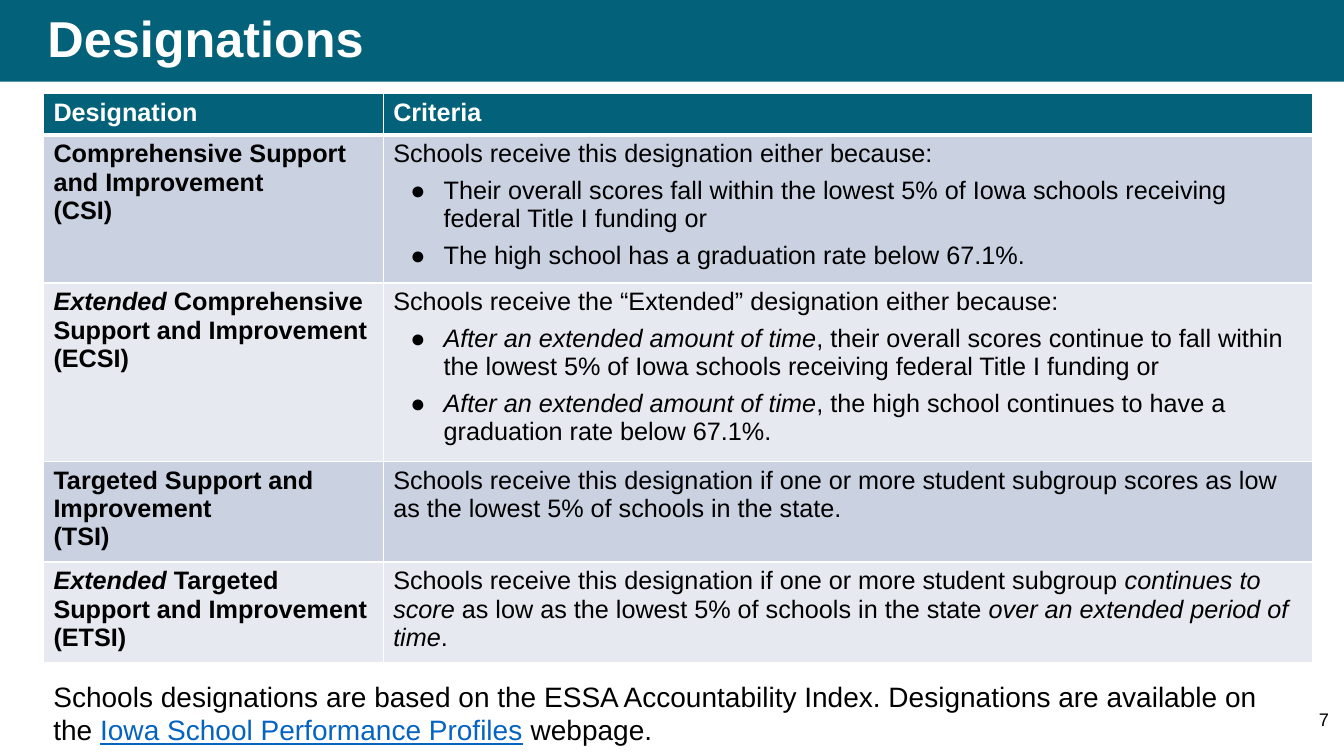
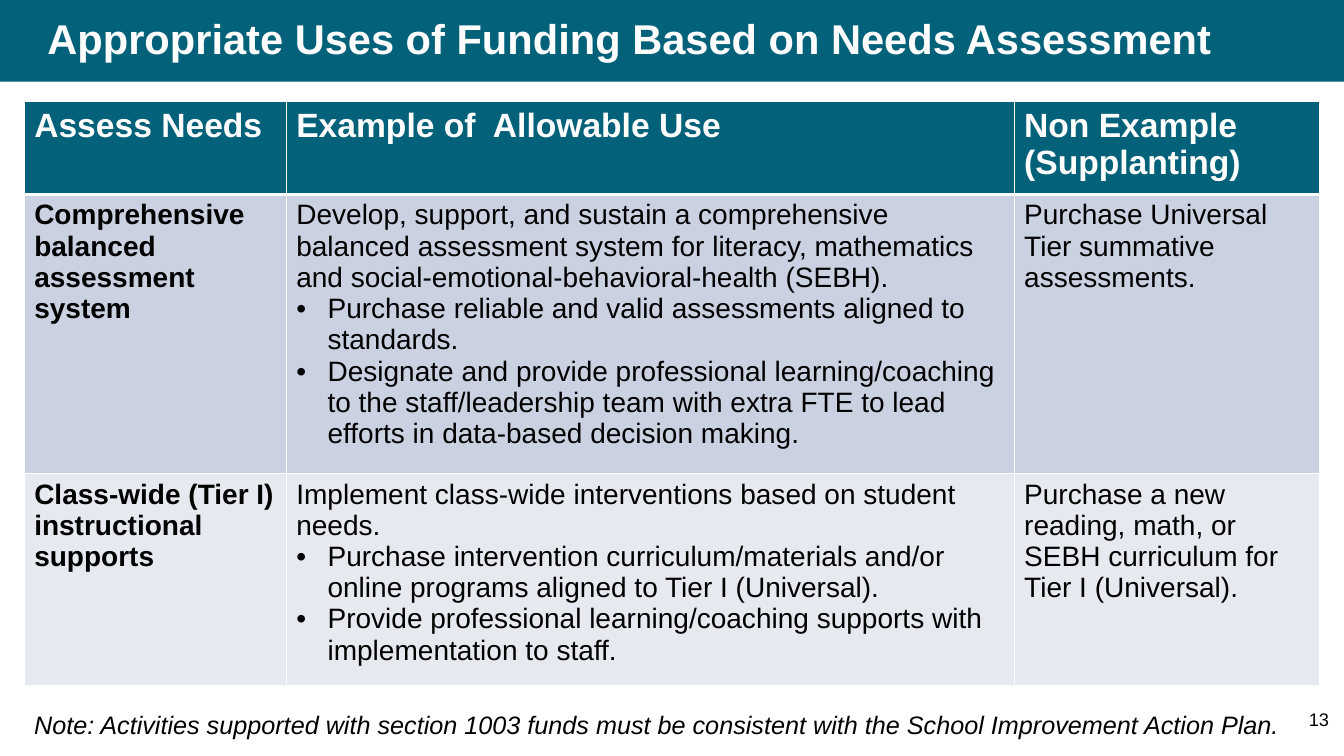
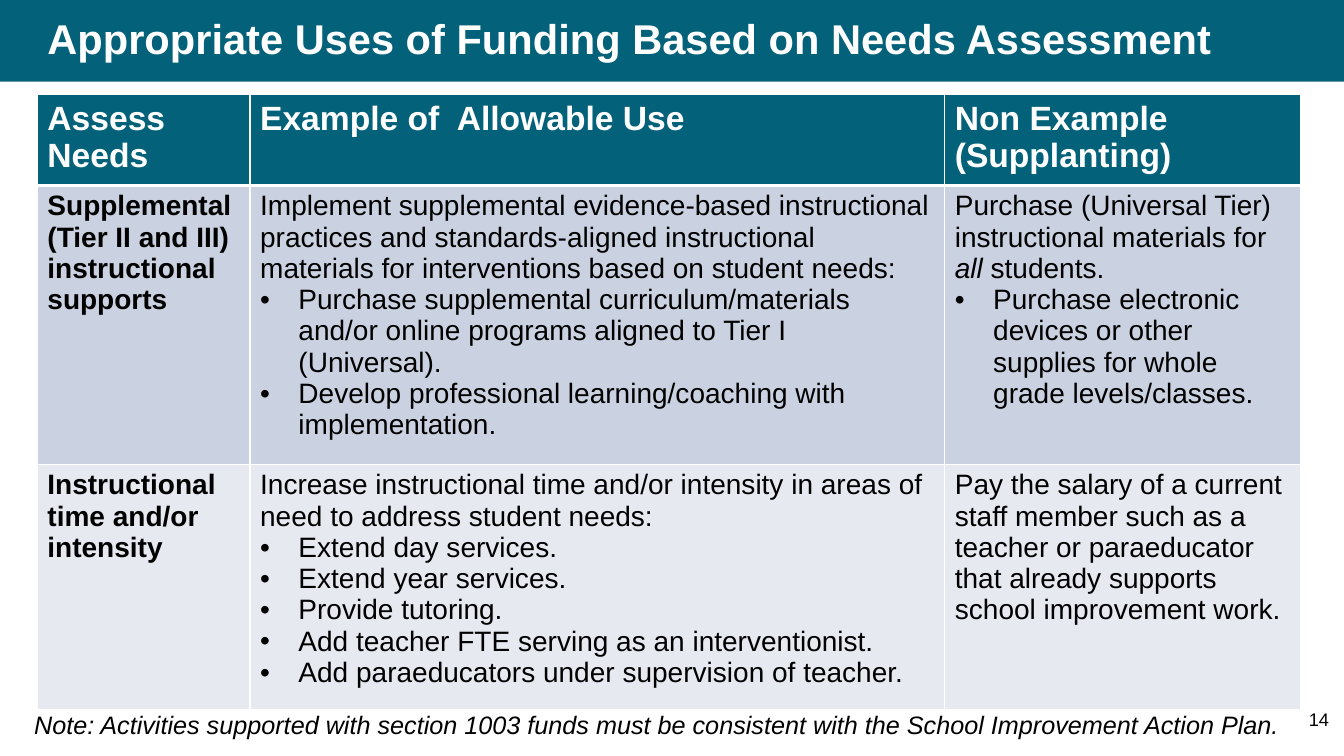
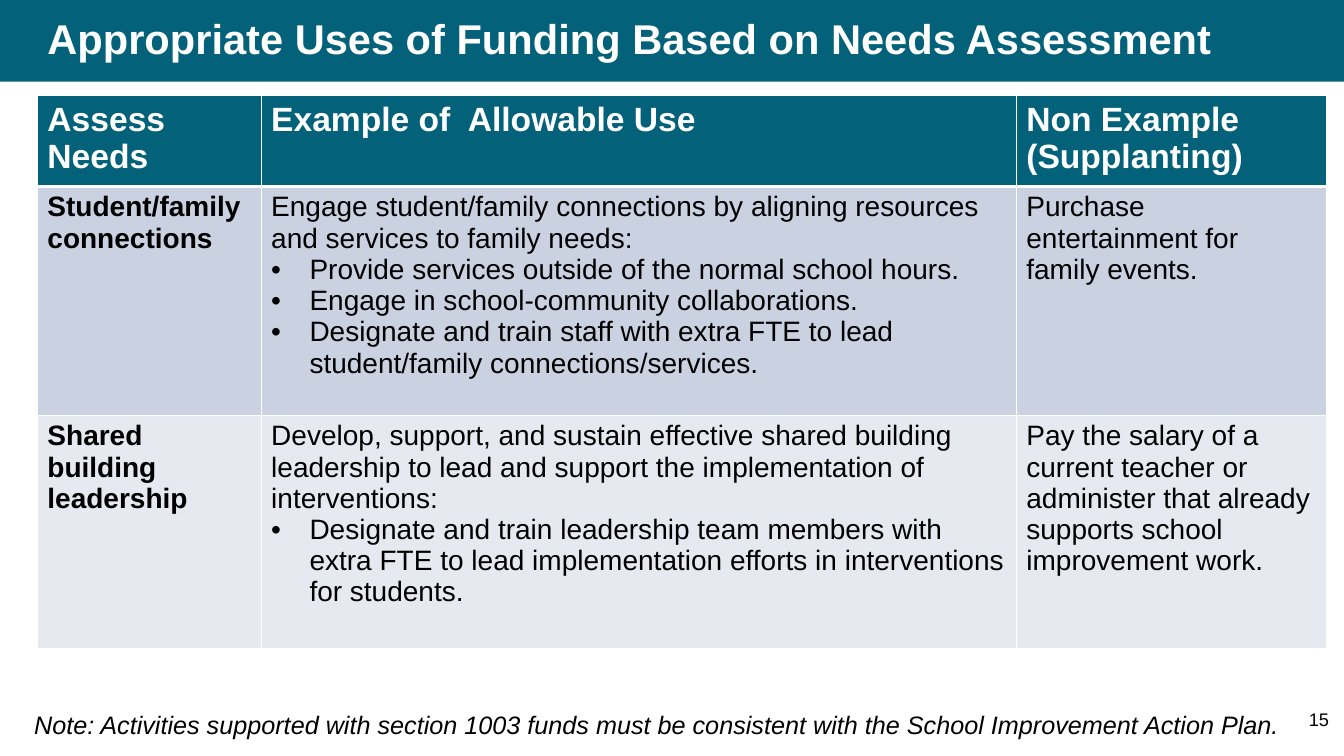
from dataclasses import dataclass

from lxml import etree
from pptx import Presentation
from pptx import util as u
from pptx.dml.color import RGBColor
from pptx.enum import shapes, text
from pptx.oxml import ns

TEAL = RGBColor(0x03, 0x61, 0x7A)
BLUE_GREY = RGBColor(0xCA, 0xD1, 0xE0)
PALE_GREY = RGBColor(0xE6, 0xE9, 0xF0)
LINK_BLUE = RGBColor(0x05, 0x63, 0xC1)
WHITE = RGBColor(0xFF, 0xFF, 0xFF)
BLACK = RGBColor(0, 0, 0)

FONT = "Arial"
BAND_HEIGHT = 10.8
TITLE_ONLY = 5
BULLET_MARK = "• "
ITALIC_MARK = "*"
LINK_MARK = "_"


@dataclass
class Bullet:
    glyph: str
    indent: float
    hang: float
    space: float = 0


ROUND_BULLET = Bullet("●", 0.5, 0.33, 6)
TIGHT_BULLET = Bullet("•", 0.31, 0.31)
WIDE_BULLET = Bullet("•", 0.38, 0.38)


class Deck:
    """Style and current page; lengths are percent of the slide's size."""

    def __init__(self):
        self.deck = Presentation()
        self.deck.slide_width = u.Inches(13.33)
        self.deck.slide_height = u.Inches(7.5)
        self.layout = self.deck.slide_layouts[TITLE_ONLY]
        self.page = None

    def across(self, share):
        return round(self.deck.slide_width * share / 100)

    def down(self, share):
        return round(self.deck.slide_height * share / 100)

    def area(self, left, top, width, height):
        return (self.across(left), self.down(top),
                self.across(width), self.down(height))

    def add_page(self, title, size, number):
        self.page = self.deck.slides.add_slide(self.layout)
        if len(self.deck.slides) == 1:
            self.add_band()
        self.add_title(title, size)
        self.add_number(number)

    def add_band(self):
        """Draw the title band and place it on the shared layout."""
        band = self.page.shapes.add_shape(
            shapes.MSO_SHAPE.RECTANGLE, *self.area(0, 0, 100, BAND_HEIGHT))
        band.shadow.inherit = False
        band.fill.solid()
        band.fill.fore_color.rgb = TEAL
        band.line.fill.background()
        self.layout.shapes._spTree.insert(2, band._element)

    def add_title(self, title, size):
        box = self.page.shapes.title
        box.left, box.top, box.width, box.height = self.area(
            2.78, 0, 92.42, BAND_HEIGHT)
        frame = box.text_frame
        frame.auto_size = text.MSO_AUTO_SIZE.NONE
        frame.vertical_anchor = text.MSO_ANCHOR.MIDDLE
        para = frame.paragraphs[0]
        para.alignment = text.PP_ALIGN.LEFT
        para.line_spacing = 0.9
        self.add_spans(para, title, size, WHITE, bold=True)

    def add_number(self, number):
        frame = self.add_text(str(number), 13, 93.62, 92.4, 6, 7.6)
        frame.margin_top = frame.margin_bottom = u.Inches(0.1)
        frame.paragraphs[0].alignment = text.PP_ALIGN.RIGHT

    def add_text(self, words, size, *place):
        box = self.page.shapes.add_textbox(*self.area(*place))
        frame = box.text_frame
        frame.word_wrap = True
        self.add_spans(frame.paragraphs[0], words, size)
        return frame

    def add_spans(self, para, words, size, color=BLACK, bold=False):
        """Write runs; text between marks is italic or looks like a link."""
        for i, part in enumerate(words.split(LINK_MARK)):
            for j, chunk in enumerate(part.split(ITALIC_MARK)):
                if not chunk:
                    continue
                span = para.add_run()
                span.text = chunk
                font = span.font
                font.name, font.size = FONT, u.Pt(size)
                font.bold, font.italic = bold, j % 2 == 1
                font.underline = i % 2 == 1
                font.color.rgb = LINK_BLUE if i % 2 else color

    def add_bullet(self, para, bullet):
        para.space_before = u.Pt(bullet.space)
        props = para._p.get_or_add_pPr()
        props.set("marL", str(u.Inches(bullet.indent)))
        props.set("indent", str(-u.Inches(bullet.hang)))
        color = etree.SubElement(props, ns.qn("a:buClr"))
        etree.SubElement(color, ns.qn("a:srgbClr"), val=str(BLACK))
        etree.SubElement(props, ns.qn("a:buFont"), typeface=FONT)
        etree.SubElement(props, ns.qn("a:buChar"), char=bullet.glyph)

    def add_borders(self, cell, top, bottom):
        props = cell._tc.get_or_add_tcPr()
        for side, width in zip("LRTB", (1, 1, top, bottom)):
            line = etree.SubElement(props, ns.qn("a:ln" + side),
                                    w=str(u.Pt(width)))
            fill = etree.SubElement(line, ns.qn("a:solidFill"))
            etree.SubElement(fill, ns.qn("a:srgbClr"), val=str(WHITE))

    def add_table(self, left, top, columns, heights, rows, sizes, bullet):
        place = self.area(left, top, sum(columns), sum(heights))
        grid = self.page.shapes.add_table(
            len(rows), len(columns), *place).table
        for column, width in zip(grid.columns, columns):
            column.width = self.across(width)
        for r, (height, cells) in enumerate(zip(heights, rows)):
            grid.rows[r].height = self.down(height)
            for c, words in enumerate(cells):
                self.fill_cell(grid.cell(r, c), words, r, c, sizes, bullet)

    def fill_cell(self, cell, words, r, c, sizes, bullet):
        header = r == 0
        self.add_borders(cell, 3 if r == 1 else 1, 3 if header else 1)
        cell.fill.solid()
        cell.fill.fore_color.rgb = (
            TEAL if header else BLUE_GREY if r % 2 else PALE_GREY)
        frame = cell.text_frame
        for i, line in enumerate(words.split("\n")):
            para = frame.add_paragraph() if i else frame.paragraphs[0]
            if line.startswith(BULLET_MARK):
                self.add_bullet(para, bullet)
            self.add_spans(para, line.removeprefix(BULLET_MARK),
                           sizes[0] if header else sizes[1],
                           WHITE if header else BLACK, header or c == 0)


# Designations table
DESIGNATIONS = [
    ("Designation", "Criteria"),
    ("Comprehensive Support and Improvement\n(CSI)",
     "Schools receive this designation either because:\n"
     "• Their overall scores fall within the lowest 5% of Iowa schools "
     "receiving federal Title I funding or\n"
     "• The high school has a graduation rate below 67.1%."),
    ("*Extended *Comprehensive Support and Improvement (ECSI)",
     "Schools receive the “Extended” designation either because:\n"
     "• *After an extended amount of time*, their overall scores continue to "
     "fall within the lowest 5% of Iowa schools receiving federal Title I "
     "funding or\n"
     "• *After an extended amount of time*, the high school continues to "
     "have a graduation rate below 67.1%."),
    ("Targeted Support and Improvement\n(TSI)",
     "Schools receive this designation if one or more student subgroup "
     "scores as low as the lowest 5% of schools in the state."),
    ("*Extended* Targeted Support and Improvement (ETSI)",
     "Schools receive this designation if one or more student subgroup "
     "*continues to score* as low as the lowest 5% of schools in the state "
     "*over an extended period of time*."),
]
PROFILES_NOTE = (
    "Schools designations are based on the ESSA Accountability Index. "
    "Designations are available on the _Iowa School Performance Profiles_ "
    "webpage.")

# Funding tables
FUNDING_TITLE = "Appropriate Uses of Funding Based on Needs Assessment"
FUNDING_HEADER = ("Assess Needs", "Example of  Allowable Use",
                  "Non Example (Supplanting)")
FUNDING_NOTE = ("*Note: Activities supported with section 1003 funds must be "
                "consistent with the School Improvement Action Plan.*")

ASSESSMENT_ROWS = [
    ("Comprehensive balanced assessment system",
     "Develop, support, and sustain a comprehensive balanced assessment "
     "system for literacy, mathematics and "
     "social-emotional-behavioral-health (SEBH).\n"
     "• Purchase reliable and valid assessments aligned to standards.\n"
     "• Designate and provide professional learning/coaching to the "
     "staff/leadership team with extra FTE to lead efforts in data-based "
     "decision making.",
     "Purchase Universal Tier summative assessments."),
    ("Class-wide (Tier I) instructional supports",
     "Implement class-wide interventions based on student needs.\n"
     "• Purchase intervention curriculum/materials and/or online programs "
     "aligned to Tier I (Universal).\n"
     "• Provide professional learning/coaching supports with implementation "
     "to staff.",
     "Purchase a new reading, math, or SEBH curriculum for Tier I "
     "(Universal)."),
]
SUPPLEMENTAL_ROWS = [
    ("Supplemental (Tier II and III) instructional supports",
     "Implement supplemental evidence-based instructional practices and "
     "standards-aligned instructional materials for interventions based on "
     "student needs:\n"
     "• Purchase supplemental curriculum/materials and/or online programs "
     "aligned to Tier I (Universal).\n"
     "• Develop professional learning/coaching with implementation.",
     "Purchase (Universal Tier) instructional materials for *all* students.\n"
     "• Purchase electronic devices or other supplies for whole grade "
     "levels/classes."),
    ("Instructional time and/or intensity",
     "Increase instructional time and/or intensity in areas of need to "
     "address student needs:\n"
     "• Extend day services.\n"
     "• Extend year services.\n"
     "• Provide tutoring.\n"
     "• Add teacher FTE serving as an interventionist.\n"
     "• Add paraeducators under supervision of teacher.",
     "Pay the salary of a current staff member such as a teacher or "
     "paraeducator that already supports school improvement work."),
]
LEADERSHIP_ROWS = [
    ("Student/family connections",
     "Engage student/family connections by aligning resources and services "
     "to family needs:\n"
     "• Provide services outside of the normal school hours.\n"
     "• Engage in school-community collaborations.\n"
     "• Designate and train staff with extra FTE to lead student/family "
     "connections/services.",
     "Purchase entertainment for family events."),
    ("Shared building leadership",
     "Develop, support, and sustain effective shared building leadership to "
     "lead and support the implementation of interventions:\n"
     "• Designate and train leadership team members with extra FTE to lead "
     "implementation efforts in interventions for students.",
     "Pay the salary of a current teacher or administer that already "
     "supports school improvement work."),
]

# Page number, left, top, column widths, row heights, rows, bullet
FUNDING_PAGES = [
    (13, 1.8, 13.47, (19.5, 54.16, 22.73), (12.27, 34.4, 26.13),
     ASSESSMENT_ROWS, TIGHT_BULLET),
    (14, 2.78, 12.53, (15.83, 51.69, 26.48), (11.2, 34.27, 30.27),
     SUPPLEMENTAL_ROWS, WIDE_BULLET),
    (15, 2.78, 12.67, (16.65, 56.19, 23.11), (11.33, 30.27, 30.8),
     LEADERSHIP_ROWS, WIDE_BULLET),
]


def main():
    deck = Deck()

    # Designations
    deck.add_page("Designations", 36, 7)
    deck.add_table(3.23, 12.4, (25.28, 69.17),
                   (5.47, 18.4, 22.27, 12.53, 12.4),
                   DESIGNATIONS, (18, 18), ROUND_BULLET)
    deck.add_text(PROFILES_NOTE, 20, 3.23, 89.2, 94.45, 10.27)

    # Uses of funding
    for number, left, top, columns, heights, rows, bullet in FUNDING_PAGES:
        deck.add_page(FUNDING_TITLE, 29.7, number)
        deck.add_table(left, top, columns, heights,
                       [FUNDING_HEADER, *rows], (24, 20), bullet)
        deck.add_text(FUNDING_NOTE, 18, 1.8, 93.2, 94.97, 5.33)

    deck.deck.save("out.pptx")


if __name__ == "__main__":
    main()
